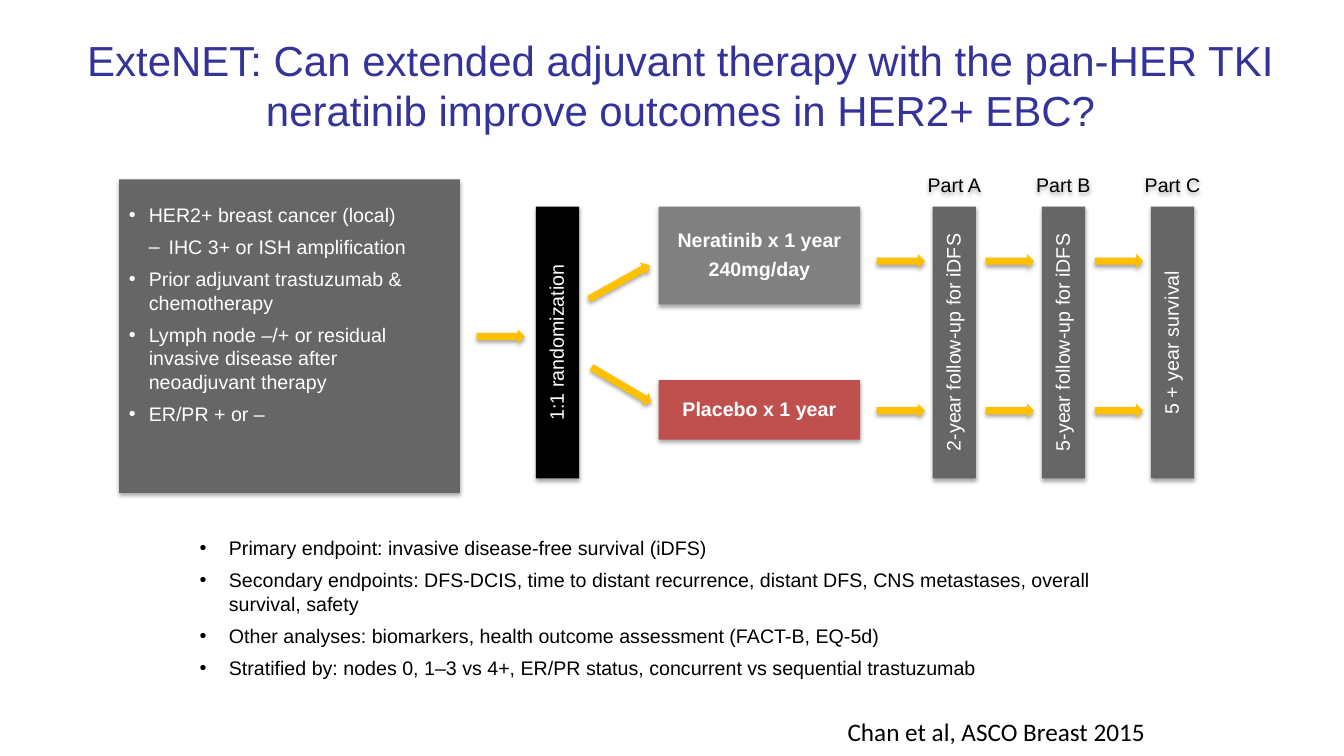
from lxml.etree import SubElement
from pptx import Presentation
from pptx.dml.color import RGBColor
from pptx.enum.shapes import MSO_SHAPE as Preset
from pptx.enum.text import MSO_ANCHOR as Anchor, PP_ALIGN as Align
from pptx.oxml.ns import qn
from pptx.util import Cm, Pt

COLORS = {
    "title": "333399", "black": "000000", "white": "FFFFFF", "panel": "666666",
    "treatment": "808080", "placebo": "C0504D", "arrow": "FFC000",
}
CENTERED = {"alignment": Align.CENTER, "line_spacing": 0.9, "space_after": Pt(6)}


class TrialSlide:
    """Holds the style and the current slide."""

    def __init__(self, presentation):
        self.slide = presentation.slides.add_slide(presentation.slide_layouts[6])
        self.font = {"name": "Arial", "size": Pt(14), "bold": False}

    def apply(self, target, values):
        for name, value in values.items():
            setattr(target, name, value)

    def shadow(self, shape):
        shape.shadow.inherit = False
        effects = shape._element.spPr.find(qn("a:effectLst"))
        outer = SubElement(effects, qn("a:outerShdw"), blurRad=str(Pt(3.1)),
                           dist=str(Pt(1.8)), dir="5400000", rotWithShape="0")
        color = SubElement(outer, qn("a:srgbClr"), val=COLORS["black"])
        SubElement(color, qn("a:alpha"), val="35000")

    def bullet(self, paragraph, mark, margin, hanging):
        properties = paragraph._p.get_or_add_pPr()
        properties.set("marL", str(Cm(margin)))
        properties.set("indent", str(-Cm(hanging)))
        SubElement(properties, qn("a:buFont"), typeface="Arial")
        SubElement(properties, qn("a:buChar"), char=mark)

    def fill_text(self, shape, lines, color, layout, font=None, frame=None):
        """Each line is a string, or a tuple of text, mark, margin and hanging."""
        text_frame = shape.text_frame
        self.apply(text_frame, {"word_wrap": True, "vertical_anchor": Anchor.MIDDLE,
                                **(frame or {})})
        for index, line in enumerate(lines):
            paragraph = text_frame.paragraphs[0] if index == 0 else text_frame.add_paragraph()
            text, *bullet = (line,) if isinstance(line, str) else line
            paragraph.text = text
            self.apply(paragraph, layout)
            if index == 0:
                paragraph.space_before = Pt(0)
            if bullet:
                self.bullet(paragraph, *bullet)
            self.apply(paragraph.font, {**self.font, **(font or {})})
            paragraph.font.color.rgb = RGBColor.from_string(COLORS[color])

    def shape(self, preset, left, top, width, height, fill, rotation=0):
        shape = self.slide.shapes.add_shape(preset, Cm(left), Cm(top), Cm(width), Cm(height))
        shape.fill.solid()
        shape.fill.fore_color.rgb = RGBColor.from_string(COLORS[fill])
        shape.line.fill.background()
        shape.rotation = rotation
        self.shadow(shape)
        return shape

    def box(self, left, top, width, height, fill, lines, layout=CENTERED, **style):
        shape = self.shape(Preset.RECTANGLE, left, top, width, height, fill)
        self.fill_text(shape, lines, "white", layout, **style)

    def bar(self, center, fill, text):
        length, thickness, middle = 6.85, 1.09, 8.63
        shape = self.shape(Preset.RECTANGLE, center - length / 2, middle - thickness / 2,
                           length, thickness, fill, 270)
        self.fill_text(shape, [text], "white", CENTERED)

    def arrow(self, center, middle, length=1.22, rotation=0):
        height = 0.36
        self.shape(Preset.RIGHT_ARROW, center - length / 2, middle - height / 2,
                   length, height, "arrow", rotation)

    def text(self, left, top, width, height, lines, color, layout, shadow=False, **style):
        box = self.slide.shapes.add_textbox(Cm(left), Cm(top), Cm(width), Cm(height))
        if shadow:
            self.shadow(box)
        self.fill_text(box, lines, color, layout, **style)


def main():
    presentation = Presentation()
    presentation.slide_width, presentation.slide_height = Cm(33.87), Cm(19.05)
    trial = TrialSlide(presentation)

    # Title
    trial.text(1.63, 1.19, 31.06, 1.9,
               ["ExteNET: Can extended adjuvant therapy with the pan-HER TKI "
                "neratinib improve outcomes in HER2+ EBC?"],
               "title", {"alignment": Align.CENTER}, font={"size": Pt(30)})

    # Endpoints
    endpoints = [
        "Primary endpoint: invasive disease-free survival (iDFS)",
        "Secondary endpoints: DFS-DCIS, time to distant recurrence, distant DFS, "
        "CNS metastases, overall survival, safety",
        "Other analyses: biomarkers, health outcome assessment (FACT-B, EQ-5d)",
        "Stratified by: nodes 0, 1–3 vs 4+, ER/PR status, concurrent vs sequential trastuzumab",
    ]
    trial.text(4.78, 13.39, 24.23, 4.09, [(text, "•", 0.74, 0.74) for text in endpoints],
               "black", {"space_after": Pt(6)}, frame={"vertical_anchor": Anchor.TOP})

    # Eligibility criteria
    criteria = [
        ("HER2+ breast cancer (local)", "•", 0.5, 0.5),
        ("IHC 3+ or ISH amplification", "–", 1, 0.5),
        ("Prior adjuvant trastuzumab & chemotherapy", "•", 0.5, 0.5),
        ("Lymph node –/+ or residual invasive disease after neoadjuvant therapy", "•", 0.5, 0.5),
        ("ER/PR + or –", "•", 0.5, 0.5),
    ]
    trial.box(3, 4.52, 8.59, 7.9, "panel", criteria,
              {"alignment": Align.LEFT, "space_before": Pt(3), "space_after": Pt(3)},
              frame={"vertical_anchor": Anchor.TOP, "margin_top": Cm(0.6)})

    # Randomization and arms
    trial.arrow(12.62, 8.48)
    trial.bar(14.05, "black", "1:1 randomization")
    trial.arrow(15.61, 7.11, 1.75, -29.1)
    trial.arrow(15.66, 9.7, 1.75, 30.5)
    bold = {"bold": True}
    trial.box(16.6, 5.21, 5.08, 2.46, "treatment", ["Neratinib x 1 year", "240mg/day"], font=bold)
    trial.box(16.6, 9.58, 5.08, 1.5, "placebo", ["Placebo x 1 year"], font=bold)

    # Follow-up parts
    parts = [
        ("Part A", "2-year follow-up for iDFS"),
        ("Part B", "5-year follow-up for iDFS"),
        ("Part C", "5 + year survival"),
    ]
    for index, (label, follow_up) in enumerate(parts):
        center = 24.05 + 2.75 * index
        trial.bar(center, "panel", follow_up)
        for middle in (6.58, 10.35):
            trial.arrow(center - 1.35, middle)
        trial.text(center - 1.27, 4.3, 2.54, 0.79, [label], "black", CENTERED, shadow=True)

    # Citation
    trial.text(21.11, 17.93, 8.1, 1.02, ["Chan et al, ASCO Breast 2015"], "black", {},
               font={"name": "Calibri", "size": Pt(18)}, frame={"word_wrap": False})

    presentation.save("out.pptx")


if __name__ == "__main__":
    main()
